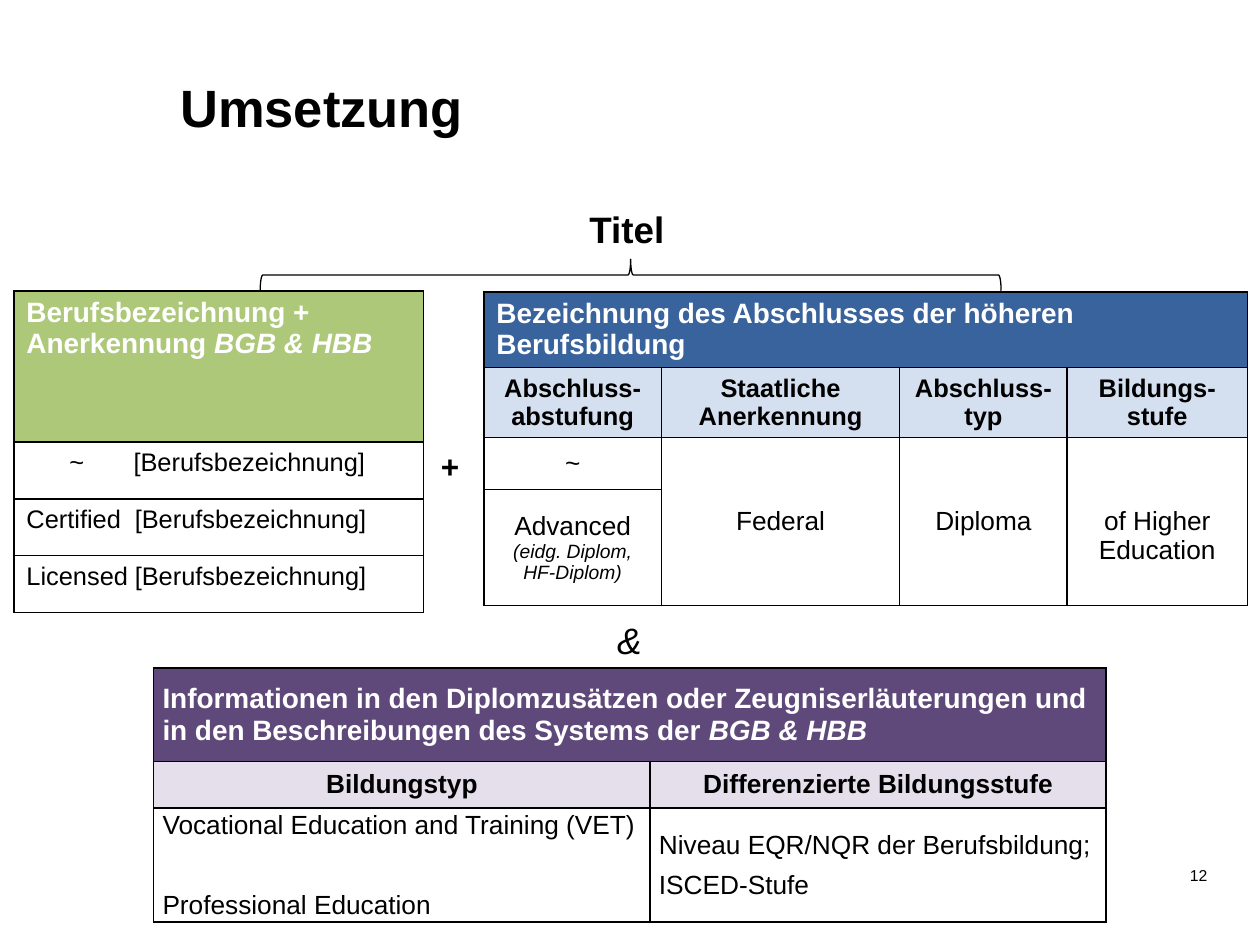
from dataclasses import dataclass

from lxml import etree
from pptx import Presentation
from pptx.dml.color import RGBColor
from pptx.enum.shapes import MSO_SHAPE
from pptx.enum.text import MSO_ANCHOR, PP_ALIGN
from pptx.oxml.ns import qn
from pptx.util import Inches, Pt

LEFT, CENTER, RIGHT, JUSTIFY = PP_ALIGN.LEFT, PP_ALIGN.CENTER, PP_ALIGN.RIGHT, PP_ALIGN.JUSTIFY
TOP, MIDDLE = MSO_ANCHOR.TOP, MSO_ANCHOR.MIDDLE
LEFT_BRACE = MSO_SHAPE.LEFT_BRACE

FONT = "Arial"
BLACK, WHITE = "000000", "FFFFFF"
GREEN, BLUE, PALE_BLUE = "AEC87A", "39639D", "D4DFEF"
PURPLE, PALE_PURPLE = "5F497A", "E5DFEC"
SLIDE_W, SLIDE_H = Inches(10), Inches(7.5)


@dataclass
class Run:
    text: str
    italic: bool | None = None
    size: float | None = None


@dataclass
class Para:
    runs: str | list[Run]
    size: float
    bold: bool = False
    italic: bool = False
    color: str = BLACK
    align: PP_ALIGN = LEFT
    before: float = 0
    line: float | None = None
    tabs: tuple[float, ...] = ()


@dataclass
class Cell:
    row: int
    col: int
    paras: list[Para]
    fill: str | None = None
    rows: int = 1
    cols: int = 1
    anchor: MSO_ANCHOR = MIDDLE
    margins: tuple[float, float] = (0.1, 0.05)
    push_down: float = 0


@dataclass
class Grid:
    left: float
    top: float
    cols: list[float]
    rows: list[float]
    cells: list[Cell]


def rgb(hex_color: str) -> RGBColor:
    return RGBColor.from_string(hex_color)


def across(percent: float) -> int:
    return round(SLIDE_W * percent / 100)


def down(percent: float) -> int:
    return round(SLIDE_H * percent / 100)


def box(left: float, top: float, width: float, height: float) -> tuple[int, int, int, int]:
    return across(left), down(top), across(width), down(height)


def write(frame, paras: list[Para]) -> None:
    for index, para in enumerate(paras):
        target = frame.add_paragraph() if index else frame.paragraphs[0]
        if para.tabs:
            tab_list = etree.SubElement(target._p.get_or_add_pPr(), qn("a:tabLst"))
            for stop in para.tabs:
                etree.SubElement(tab_list, qn("a:tab"), pos=str(Inches(stop)), algn="l")
        target.alignment = para.align
        target.space_before = Pt(para.before)
        if para.line:
            target.line_spacing = Pt(para.line)
        font = target.font
        font.name, font.size = FONT, Pt(para.size)
        font.bold, font.italic = para.bold, para.italic
        font.color.rgb = rgb(para.color)
        runs = [Run(para.runs)] if isinstance(para.runs, str) else para.runs
        for part in runs:
            run = target.add_run()
            run.text = part.text
            if part.italic is not None:
                run.font.italic = part.italic
            if part.size:
                run.font.size = Pt(part.size)


def add_label(slide, place: tuple[int, int, int, int], para: Para, wrap: bool = True) -> None:
    frame = slide.shapes.add_textbox(*place).text_frame
    frame.word_wrap = wrap
    write(frame, [para])


def outline(cell) -> None:
    props = cell._tc.get_or_add_tcPr()
    for position, side in enumerate(("lnL", "lnR", "lnT", "lnB")):
        line = etree.Element(qn(f"a:{side}"), w=str(Pt(1)))
        fill = etree.SubElement(line, qn("a:solidFill"))
        etree.SubElement(fill, qn("a:srgbClr"), val=BLACK)
        props.insert(position, line)


def add_grid(slide, grid: Grid) -> None:
    place = box(grid.left, grid.top, sum(grid.cols), sum(grid.rows))
    table = slide.shapes.add_table(len(grid.rows), len(grid.cols), *place).table
    table.first_row = table.horz_banding = False
    for column, width in zip(table.columns, grid.cols):
        column.width = across(width)
    for row, height in zip(table.rows, grid.rows):
        row.height = down(height)
    for cell in table.iter_cells():
        cell.fill.background()
        outline(cell)
    for item in grid.cells:
        cell = table.cell(item.row, item.col)
        if item.rows > 1 or item.cols > 1:
            cell.merge(table.cell(item.row + item.rows - 1, item.col + item.cols - 1))
        side, edge = item.margins
        cell.margin_left = cell.margin_right = Inches(side)
        cell.margin_top, cell.margin_bottom = Inches(edge + item.push_down), Inches(edge)
        cell.vertical_anchor = item.anchor
        if item.fill:
            cell.fill.solid()
            cell.fill.fore_color.rgb = rgb(item.fill)
        write(cell.text_frame, item.paras)


def banner(runs: str | list[Run]) -> Para:
    return Para(runs, 16, bold=True, color=WHITE)


def occupation_grid() -> Grid:
    heading = [banner("Berufsbezeichnung +"),
               banner([Run("Anerkennung"), Run(" BGB & HBB", italic=True)])]
    entries = [("\t~", (0.34, 0.85)), ("Certified", (0.86,)), ("Licensed", (0.86,))]
    cells = [Cell(0, 0, heading, GREEN, anchor=TOP)]
    cells += [Cell(row, 0, [Para(f"{prefix}\t[Berufsbezeichnung]", 14.5, tabs=tabs)], anchor=TOP)
              for row, (prefix, tabs) in enumerate(entries, 1)]
    return Grid(1.1, 30.8, [32.5], [16, 6, 6, 6], cells)


def qualification_grid() -> Grid:
    heads = ["Abschluss-abstufung", "Staatliche Anerkennung", "Abschluss-typ", "Bildungs-stufe"]
    advanced = [Run("Advanced "), Run("(eidg. Diplom, HF-Diplom)", italic=True, size=11)]
    cells = [Cell(0, 0, [banner("Bezeichnung des Abschlusses der höheren Berufsbildung")],
                  BLUE, cols=4)]
    cells += [Cell(1, col, [Para(head, 14.5, bold=True, align=CENTER)], PALE_BLUE)
              for col, head in enumerate(heads)]
    cells += [Cell(row, 0, [Para(level, 15, align=CENTER)])
              for row, level in ((2, "~"), (3, advanced))]
    shared = [("Federal", 0), ("Diploma", 0), ("of Higher Education", 0.23)]
    cells += [Cell(2, col, [Para(text, 15, align=CENTER)], rows=2, push_down=push)
              for col, (text, push) in enumerate(shared, 1)]
    return Grid(38.4, 30.9, [14.1, 18.9, 13.3, 14.3], [8, 7.3, 5.5, 12.3], cells)


def information_grid() -> Grid:
    tight = (0.07, 0)
    heading = banner([Run("Informationen in den Diplomzusätzen oder Zeugniserläuterungen und "
                          "in den Beschreibungen des Systems der "),
                      Run("BGB & HBB", italic=True)])
    cells = [Cell(0, 0, [heading], PURPLE, cols=2, margins=tight)]
    cells += [Cell(1, col, [Para(head, 15, bold=True, align=CENTER)], PALE_PURPLE, margins=tight)
              for col, head in enumerate(["Bildungstyp", "Differenzierte Bildungsstufe"])]
    education = [Para("Vocational Education and Training (VET)", 15, align=JUSTIFY),
                 Para("Professional Education", 15, align=JUSTIFY, before=29)]
    levels = [Para("Niveau EQR/NQR der Berufsbildung;", 15), Para("ISCED-Stufe", 15, before=6)]
    cells += [Cell(2, col, paras, margins=tight) for col, paras in enumerate([education, levels])]
    return Grid(12.2, 70.7, [39.4, 36.2], [9.9, 4.9, 12.1], cells)


def main() -> None:
    deck = Presentation()
    deck.slide_width, deck.slide_height = SLIDE_W, SLIDE_H
    slide = deck.slides.add_slide(deck.slide_layouts[5])

    # Slide title
    title = slide.shapes.title
    title.left, title.top, title.width, title.height = box(13.3, 7.3, 85.5, 10.4)
    title.text_frame.vertical_anchor = TOP
    write(title.text_frame, [Para("Umsetzung", 30, bold=True)])

    # Brace joining the two upper tables
    brace = slide.shapes.add_shape(LEFT_BRACE, *box(48.8, -10.1, 2.5, 78.4))
    brace.rotation = 90
    brace.shadow.inherit = False
    brace.fill.background()
    brace.line.color.rgb = rgb(BLACK)
    brace.line.width = Pt(0.75)

    # Tables
    for grid in (occupation_grid(), qualification_grid(), information_grid()):
        add_grid(slide, grid)

    # Labels between the tables and slide number
    add_label(slide, box(45.8, 21.2, 8, 6), Para("Titel", 21, bold=True), wrap=False)
    add_label(slide, box(34, 46.7, 4.9, 5.3), Para("+", 18, bold=True))
    add_label(slide, box(48, 64.7, 4, 6), Para("&", 21, italic=True), wrap=False)
    add_label(slide, box(72.4, 90.7, 24.4, 5.3), Para("12", 9, align=RIGHT, line=12))

    deck.save("out.pptx")


if __name__ == "__main__":
    main()
